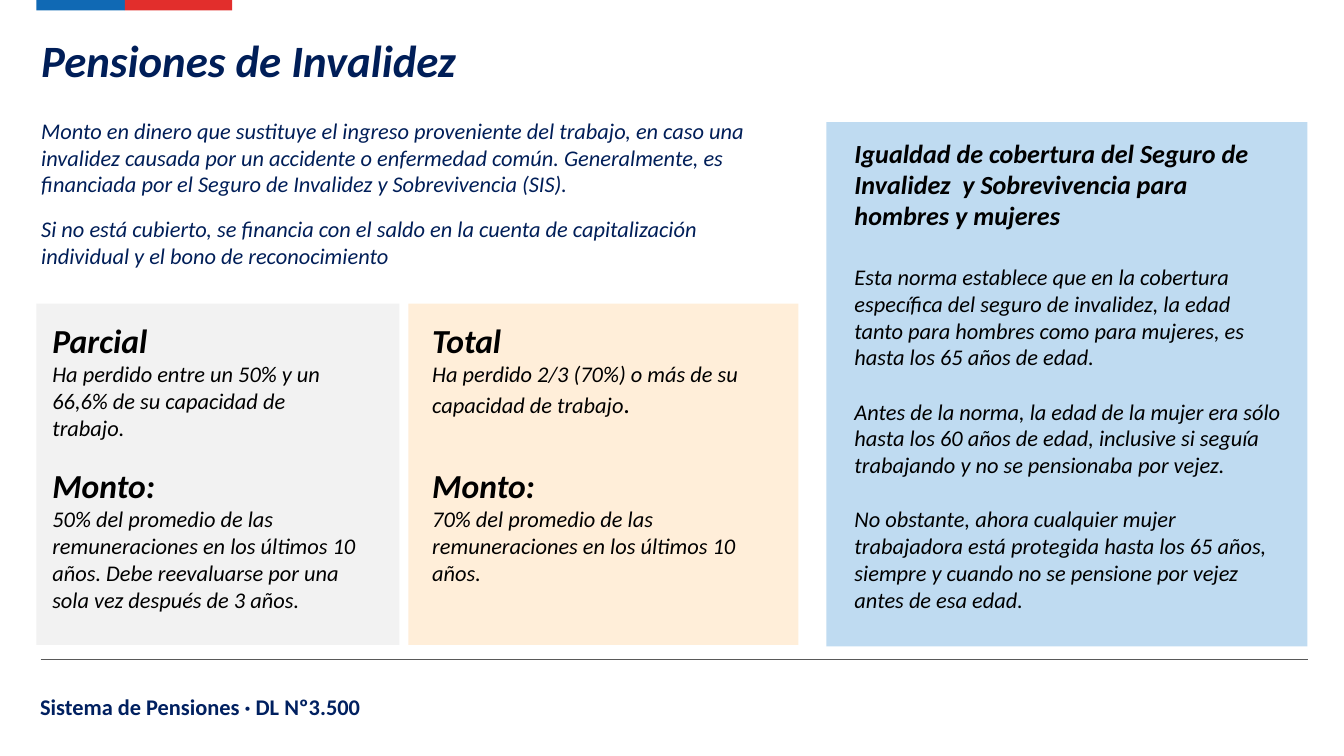
import pptx
import pptx.util
import pptx.dml.color
import pptx.enum.shapes
import lxml.etree
from dataclasses import dataclass

Cm = pptx.util.Cm
Pt = pptx.util.Pt


@dataclass(frozen=True)
class Theme:
    font: str = "Calibri"
    navy: str = "001E58"
    footer: str = "002060"
    black: str = "000000"
    rule: str = "595959"
    blue_band: str = "1069B4"
    red_band: str = "E22E2C"
    partial: str = "F2F2F2"
    total: str = "FFEED9"
    equality: str = "BFDBF1"
    title: int = 24
    heading: int = 18
    subheading: int = 14
    body: int = 12


THEME = Theme()

TITLE = "Pensiones de Invalidez"
INTRO = [
    (2.08, 14.78, 1.8, "Monto en dinero que sustituye el ingreso proveniente del trabajo, en caso una invalidez causada por un accidente o enfermedad común. Generalmente, es financiada por el Seguro de Invalidez y Sobrevivencia (SIS)."),
    (3.94, 14.1, 1.27, "Si no está cubierto, se financia con el saldo en la cuenta de capitalización individual y el bono de reconocimiento"),
]
PENSIONS = [
    {
        "left": 0.69, "width": 6.86, "text_left": 0.74, "fill": THEME.partial,
        "sections": [
            ("Parcial", ["Ha perdido entre un 50% y un 66,6% de su capacidad de trabajo."], 6.27, 2.57),
            ("Monto:", ["50% del promedio de las remuneraciones en los últimos 10 años. Debe reevaluarse por una sola vez después de 3 años."], 6.55, 3.07),
        ],
    },
    {
        "left": 7.72, "width": 7.37, "text_left": 7.92, "fill": THEME.total,
        "sections": [
            ("Total", ["Ha perdido 2/3 (70%) o más de su capacidad de trabajo", "."], 6.83, 2.13),
            ("Monto:", ["70% del promedio de las remuneraciones en los últimos 10 años."], 6.55, 2.57),
        ],
    },
]
SECTION_TOPS = (5.92, 8.66)
EQUALITY_HEADING = "Igualdad de cobertura del Seguro de Invalidez  y Sobrevivencia para hombres y mujeres"
EQUALITY_BODY = [
    "Esta norma establece que en la cobertura específica del seguro de invalidez, la edad  tanto para hombres como para mujeres, es hasta los 65 años de edad.",
    "Antes de la norma, la edad de la mujer era sólo hasta los 60 años de edad, inclusive si seguía trabajando y no se pensionaba por vejez.",
    "No obstante, ahora cualquier mujer trabajadora está protegida hasta los 65 años, siempre y cuando no se pensione por vejez antes de esa edad.",
]
FOOTER = "Sistema de Pensiones · DL Nº3.500"
BANDS = [(0.69, 1.67, THEME.blue_band), (2.36, 2.03, THEME.red_band)]


def rgb(value):
    return pptx.dml.color.RGBColor.from_string(value)


def add_panel(slide, box, fill):
    panel = slide.shapes.add_shape(
        pptx.enum.shapes.MSO_SHAPE.RECTANGLE, *map(Cm, box))
    panel.shadow.inherit = False
    panel.fill.solid()
    panel.fill.fore_color.rgb = rgb(fill)
    panel.line.fill.background()


def add_text(slide, box, paragraphs, color, italic=True, insets=(0.25, 0.13)):
    frame = slide.shapes.add_textbox(*map(Cm, box)).text_frame
    frame.word_wrap = True
    frame.margin_left = frame.margin_right = Cm(insets[0])
    frame.margin_top = frame.margin_bottom = Cm(insets[1])
    for index, (runs, bold, gap) in enumerate(paragraphs):
        paragraph = frame.add_paragraph() if index else frame.paragraphs[0]
        paragraph.space_before = Pt(gap)
        for wording, size in runs:
            run = paragraph.add_run()
            run.text = wording
            run.font.name = THEME.font
            run.font.size = Pt(size)
            run.font.bold = bold
            run.font.italic = italic
            run.font.color.rgb = rgb(color)


def add_rule(slide):
    rule = slide.shapes.add_connector(
        pptx.enum.shapes.MSO_CONNECTOR.STRAIGHT, Cm(0.77), Cm(12.47), Cm(24.72), Cm(12.47))
    rule.line.color.rgb = rgb(THEME.rule)
    rule.line.width = Pt(0.75)
    lxml.etree.SubElement(
        rule._element.spPr, pptx.oxml.ns.qn("a:effectLst"))


def main():
    deck = pptx.Presentation()
    deck.slide_width, deck.slide_height = Cm(25.4), Cm(14.29)
    slide = deck.slides.add_slide(deck.slide_layouts[6])

    add_rule(slide)
    for left, width, fill in BANDS:
        add_panel(slide, (left, 0, width, 0.2), fill)
    add_text(slide, (0.58, 13, 9.88, 0.64), [([(FOOTER, THEME.body)], True, 0)],
             THEME.footer, italic=False, insets=(0.18, 0.1))
    add_text(slide, (0.53, 0.48, 24.18, 1.27),
             [([(TITLE, THEME.title)], True, 0)], THEME.navy)
    for top, width, height, wording in INTRO:
        add_text(slide, (0.53, top, width, height),
                 [([(wording, THEME.body)], False, 0)], THEME.navy)

    for pension in PENSIONS:
        add_panel(slide, (pension["left"], 5.74, pension["width"], 6.45), pension["fill"])
        for top, (heading, parts, width, height) in zip(SECTION_TOPS, pension["sections"]):
            body = list(zip(parts, (THEME.body, THEME.subheading)))
            add_text(slide, (pension["text_left"], top, width, height),
                     [([(heading, THEME.heading)], True, 0), (body, False, 0)], THEME.black)

    add_panel(slide, (15.62, 2.31, 9.09, 9.91), THEME.equality)
    equality = [([(EQUALITY_HEADING, THEME.subheading)], True, 0)]
    for index, wording in enumerate(EQUALITY_BODY):
        gap = 1.22 * (THEME.body if index else THEME.subheading)
        equality.append(([(wording, THEME.body)], False, round(gap, 1)))
    add_text(slide, (15.9, 2.46, 8.66, 9.32), equality, THEME.black)

    deck.save("out.pptx")


if __name__ == "__main__":
    main()
